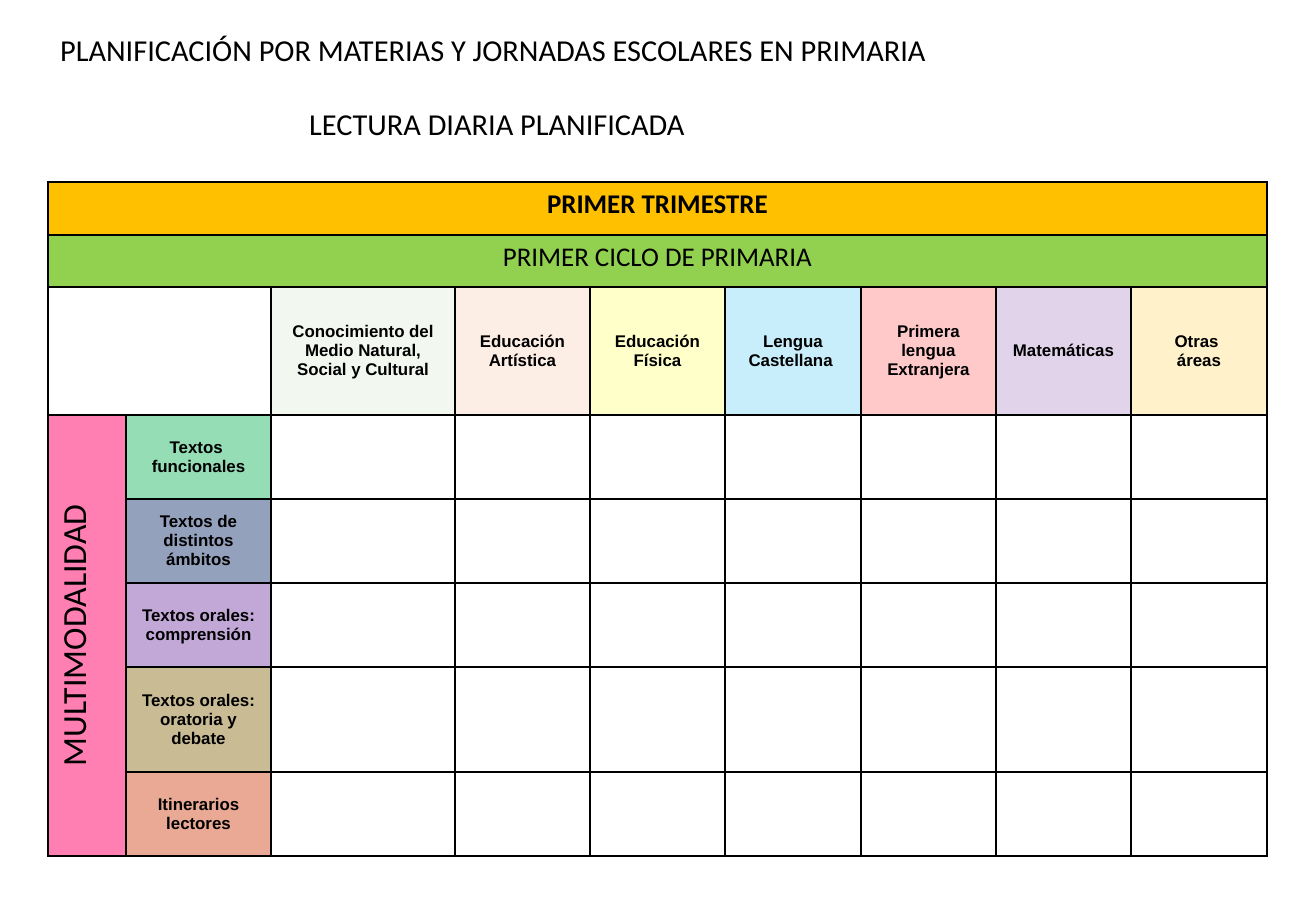
from lxml.etree import SubElement as Sub
from pptx import Presentation
from pptx.dml.color import RGBColor as RGB
from pptx.enum.text import MSO_ANCHOR as Anchor, MSO_AUTO_SIZE as Auto, PP_ALIGN as Align
from pptx.oxml import parse_xml
from pptx.oxml.ns import qn
from pptx.util import Pt

BLACK = RGB(0, 0, 0)
WHITE = RGB(255, 255, 255)
GOLD = RGB(0xFF, 0xC0, 0x00)
GREEN = RGB(0x92, 0xD0, 0x50)
PINK = RGB(0xFF, 0x00, 0x66)
SAGE = RGB(0xC5, 0xE0, 0xB4)
PEACH = RGB(0xF4, 0xB1, 0x83)
YELLOW = RGB(0xFF, 0xFF, 0x00)
SKY = RGB(0x00, 0xB0, 0xF0)
RED = RGB(0xFF, 0x00, 0x00)
PURPLE = RGB(0x70, 0x30, 0xA0)
JADE = RGB(0x00, 0xB0, 0x50)
NAVY = RGB(0x00, 0x20, 0x60)
OLIVE = RGB(0x80, 0x60, 0x00)
RUST = RGB(0xCC, 0x33, 0x00)

TITLE = "PLANIFICACIÓN POR MATERIAS Y JORNADAS ESCOLARES EN PRIMARIA\nLECTURA DIARIA PLANIFICADA"
BANDS = [("PRIMER TRIMESTRE", GOLD, True), ("PRIMER CICLO DE PRIMARIA", GREEN, False)]
AREAS = [
    ("Conocimiento del Medio Natural, Social y Cultural", SAGE),
    ("Educación\nArtística", PEACH),
    ("Educación Física", YELLOW),
    ("Lengua Castellana ", SKY),
    ("Primera lengua Extranjera", RED),
    ("Matemáticas", PURPLE),
    ("Otras \náreas", GOLD),
]
MODES = [
    ("Textos \nfuncionales", JADE),
    ("Textos de distintos ámbitos", NAVY),
    ("Textos orales: comprensión", PURPLE),
    ("Textos orales: oratoria y debate", OLIVE),
    ("Itinerarios lectores", RUST),
]
SIDE = "MULTIMODALIDAD"
COLS = [78, 145, 184] + [135, 135, 136] * 2
ROWS = [53, 52, 128, 84, 84, 84, 105, 84]
NS = "http://schemas.openxmlformats.org/drawingml/2006/main"


def px(n):
    return round(n * 914400 / 121.5)


def paint(cell, color, alpha=100):
    cell.fill.solid()
    cell.fill.fore_color.rgb = color
    if alpha < 100:
        tint = cell._tc.tcPr.find(".//" + qn("a:srgbClr"))
        Sub(tint, qn("a:alpha"), val=str(alpha * 1000))


def edge(cell):
    for i, side in enumerate("LRTB"):
        cell._tc.tcPr.insert(i, parse_xml(
            f'<a:ln{side} xmlns:a="{NS}" w="12700"><a:solidFill>'
            f'<a:srgbClr val="{BLACK}"/></a:solidFill></a:ln{side}>'))


def write(frame, text, face, size, bold=False):
    frame.text = text
    for par in frame.paragraphs:
        par.alignment = Align.CENTER
        font = par.font
        font.name, font.size, font.bold = face, Pt(size), bold
        font.color.rgb = BLACK


def label(cell, text, color, alpha):
    paint(cell, color, alpha)
    cell.vertical_anchor = Anchor.MIDDLE
    write(cell.text_frame, text, "Arial", 10, True)


def main():
    deck = Presentation()
    deck.slide_width, deck.slide_height = px(1316), px(911)
    slide = deck.slides.add_slide(deck.slide_layouts[5])

    title = slide.shapes.title
    title.left, title.top, title.width, title.height = px(48), px(25), px(898), px(123)
    frame = title.text_frame
    write(frame, TITLE, "Calibri", 18)
    frame.word_wrap = True
    frame.auto_size = Auto.NONE
    frame.vertical_anchor = Anchor.TOP
    head, sub = frame.paragraphs
    head.alignment = Align.LEFT
    sub.space_before = Pt(22)

    grid = slide.shapes.add_table(
        len(ROWS), len(COLS), px(48), px(182), px(sum(COLS)), px(sum(ROWS))).table
    grid.first_row = grid.horz_banding = False
    for col, width in zip(grid.columns, COLS):
        col.width = px(width)
    for row, height in zip(grid.rows, ROWS):
        row.height = px(height)
    for cell in grid.iter_cells():
        paint(cell, WHITE)

    for r, (text, color, bold) in enumerate(BANDS):
        band = grid.cell(r, 0)
        band.merge(grid.cell(r, len(COLS) - 1))
        paint(band, color)
        write(band.text_frame, text, "Calibri", 16, bold)
    grid.cell(2, 0).merge(grid.cell(2, 1))
    for c, (text, color) in enumerate(AREAS, 2):
        label(grid.cell(2, c), text, color, 21)
    for r, (text, color) in enumerate(MODES, 3):
        label(grid.cell(r, 1), text, color, 42)

    side = grid.cell(3, 0)
    side.merge(grid.cell(len(ROWS) - 1, 0))
    paint(side, PINK, 50)
    side.vertical_anchor = Anchor.MIDDLE
    side._tc.tcPr.set("vert", "vert270")
    write(side.text_frame, SIDE, "Calibri", 20)

    for cell in grid.iter_cells():
        edge(cell)
    deck.save("out.pptx")


if __name__ == "__main__":
    main()
